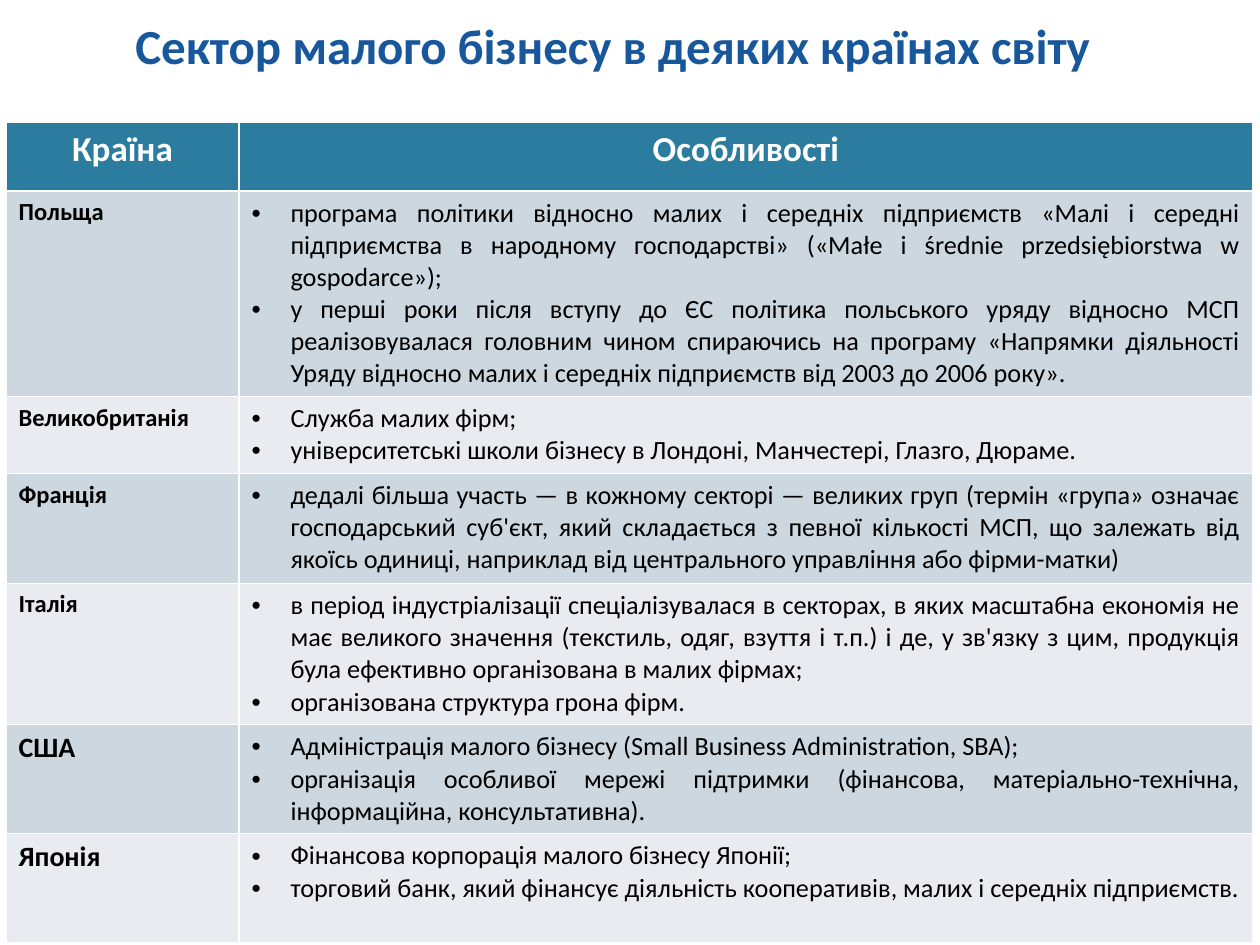
from lxml import etree
from pptx import Presentation
from pptx.dml.color import RGBColor
from pptx.enum.text import MSO_ANCHOR, PP_ALIGN
from pptx.oxml.ns import qn
from pptx.util import Pt

EMU_PER_PX = 914400 // 126
SLIDE_SIZE = (1260, 945)
TITLE_BOX = (7, -16, 1211, 97)
TABLE_LEFT, TABLE_TOP = 6, 122
COLUMN_WIDTHS = (233, 1014)
HEADER_HEIGHT = 69
BULLET_INDENT = 39
TITLE_ONLY_LAYOUT = 5

FONT = "Calibri"
BLUE = RGBColor(0x18, 0x57, 0x9B)
TEAL = RGBColor(0x2C, 0x7C, 0x9F)
WHITE = RGBColor(0xFF, 0xFF, 0xFF)
BLACK = RGBColor(0x00, 0x00, 0x00)
BANDS = (RGBColor(0xCD, 0xD7, 0xDF), RGBColor(0xE8, 0xEC, 0xF0))
CENTER, LEFT, JUSTIFY = PP_ALIGN.CENTER, PP_ALIGN.LEFT, PP_ALIGN.JUSTIFY
BOTTOM = MSO_ANCHOR.BOTTOM

TITLE = "Сектор малого бізнесу в деяких країнах світу"
HEADERS = ("Країна", "Особливості")
# country, name size in points, row height in px, features
COUNTRIES = [
    ("Польща", 14, 205, [
        "програма політики відносно малих і середніх підприємств «Малі і середні "
        "підприємства в народному господарстві» («Małe i średnie przedsiębiorstwa w "
        "gospodarce»);",
        "у перші роки після вступу до ЄС політика польського уряду відносно МСП "
        "реалізовувалася головним чином спираючись на програму «Напрямки діяльності "
        "Уряду відносно малих і середніх підприємств від 2003 до 2006 року».",
    ]),
    ("Великобританія", 14, 76, [
        "Служба малих фірм;",
        "університетські школи бізнесу в Лондоні, Манчестері, Глазго, Дюраме.",
    ]),
    ("Франція", 14, 110, [
        "дедалі більша участь — в кожному секторі — великих груп (термін «група» означає "
        "господарський суб'єкт, який складається з певної кількості МСП, що залежать від "
        "якоїсь одиниці, наприклад від центрального управління або фірми-матки)",
    ]),
    ("Італія", 14, 141, [
        "в період індустріалізації спеціалізувалася в секторах, в яких масштабна економія не "
        "має великого значення (текстиль, одяг, взуття і т.п.) і де, у зв'язку з цим, продукція "
        "була ефективно організована в малих фірмах;",
        "організована структура грона фірм.",
    ]),
    ("США", 16, 109, [
        "Адміністрація малого бізнесу (Small Business Administration, SBA);",
        "організація особливої мережі підтримки (фінансова, матеріально-технічна, "
        "інформаційна, консультативна).",
    ]),
    ("Японія", 16, 109, [
        "Фінансова корпорація малого бізнесу Японії;",
        "торговий банк, який фінансує діяльність кооперативів, малих і середніх "
        "підприємств.",
    ]),
]


def px(length):
    return length * EMU_PER_PX


def add_bullet(paragraph):
    properties = paragraph._p.get_or_add_pPr()
    properties.set("marL", str(px(BULLET_INDENT)))
    properties.set("indent", str(-px(BULLET_INDENT)))
    etree.SubElement(properties, qn("a:buFont")).set("typeface", "Arial")
    etree.SubElement(properties, qn("a:buChar")).set("char", "•")


def write(text_frame, lines, size, color, bold, alignment, bulleted=False):
    text_frame.text = "\n".join(lines)
    font_format = {"name": FONT, "size": Pt(size), "bold": bold}
    for paragraph in text_frame.paragraphs:
        if bulleted:
            add_bullet(paragraph)
        paragraph.alignment = alignment
        for run in paragraph.runs:
            for name, value in font_format.items():
                setattr(run.font, name, value)
            run.font.color.rgb = color


def fill_cell(cell, color):
    cell.fill.solid()
    cell.fill.fore_color.rgb = color


def add_title(slide):
    title = slide.shapes.title
    for name, length in zip(("left", "top", "width", "height"), TITLE_BOX):
        setattr(title, name, px(length))
    title.text_frame.vertical_anchor = BOTTOM
    write(title.text_frame, [TITLE], 28, BLUE, True, CENTER)


def add_country_table(slide):
    heights = [HEADER_HEIGHT] + [height for _, _, height, _ in COUNTRIES]
    table = slide.shapes.add_table(
        len(heights), len(COLUMN_WIDTHS), px(TABLE_LEFT), px(TABLE_TOP),
        px(sum(COLUMN_WIDTHS)), px(sum(heights))).table
    for column, width in zip(table.columns, COLUMN_WIDTHS):
        column.width = px(width)
    for row, height in zip(table.rows, heights):
        row.height = px(height)

    for cell, header in zip(table.rows[0].cells, HEADERS):
        fill_cell(cell, TEAL)
        write(cell.text_frame, [header], 20, WHITE, True, CENTER)
    for index, (country, size, _, features) in enumerate(COUNTRIES):
        name_cell, feature_cell = table.rows[index + 1].cells
        for cell in (name_cell, feature_cell):
            fill_cell(cell, BANDS[index % len(BANDS)])
        write(name_cell.text_frame, [country], size, BLACK, True, LEFT)
        write(feature_cell.text_frame, features, 15, BLACK, False, JUSTIFY, bulleted=True)


def main():
    presentation = Presentation()
    presentation.slide_width, presentation.slide_height = map(px, SLIDE_SIZE)
    slide = presentation.slides.add_slide(presentation.slide_layouts[TITLE_ONLY_LAYOUT])
    add_title(slide)
    add_country_table(slide)
    presentation.save("out.pptx")


if __name__ == "__main__":
    main()
